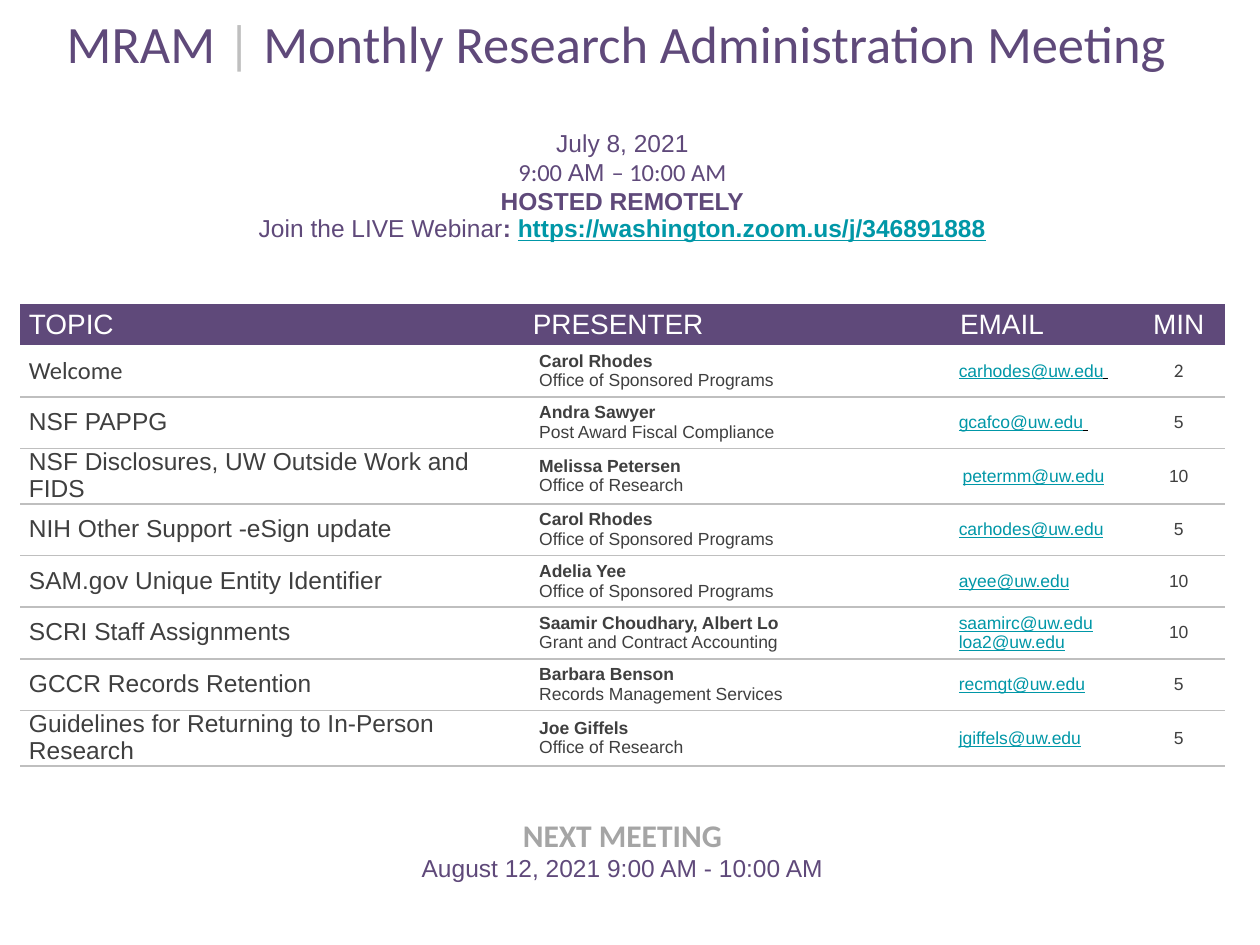
from lxml import etree
from pptx import Presentation
from pptx.dml.color import RGBColor
from pptx.enum.text import MSO_ANCHOR, PP_ALIGN
from pptx.oxml.ns import qn
from pptx.util import Inches, Pt

LEFT, CENTER = PP_ALIGN.LEFT, PP_ALIGN.CENTER
MIDDLE, BOTTOM = MSO_ANCHOR.MIDDLE, MSO_ANCHOR.BOTTOM
PLAIN = "{2D5ABB26-0587-4C30-8999-92F81FD0307C}"
COLORS = {"purple": "5F497A", "rule": "BFBFBF", "link": "0097A7", "text": "3F3F3F",
          "gray": "A5A5A5", "white": "FFFFFF", "black": "000000"}
COLS = [4, 3.33, 1.5, 0.73]
ROWS = [0.62, 1.79, 0.33, 0.41, 0.41, 0.44, 0.41, 0.41, 0.41, 0.41, 0.44, 0.93]
SPONSOR = "Office of Sponsored Programs"
TOPICS = [
    ("Welcome", "Carol Rhodes", SPONSOR, ["carhodes@uw.edu"], "2"),
    ("NSF PAPPG", "Andra Sawyer", "Post Award Fiscal Compliance", ["gcafco@uw.edu"], "5"),
    ("NSF Disclosures, UW Outside Work and FIDS", "Melissa Petersen",
     "Office of Research", ["petermm@uw.edu"], "10"),
    ("NIH Other Support -eSign update", "Carol Rhodes", SPONSOR, ["carhodes@uw.edu"], "5"),
    ("SAM.gov Unique Entity Identifier", "Adelia Yee", SPONSOR, ["ayee@uw.edu"], "10"),
    ("SCRI Staff Assignments", "Saamir Choudhary, Albert Lo",
     "Grant and Contract Accounting", ["saamirc@uw.edu", "loa2@uw.edu"], "10"),
    ("GCCR Records Retention", "Barbara Benson", "Records Management Services",
     ["recmgt@uw.edu"], "5"),
    ("Guidelines for Returning to In-Person Research", "Joe Giffels",
     "Office of Research", ["jgiffels@uw.edu"], "5"),
]


def run(text, size, color="text", font="Arial", bold=False, line=False):
    """Describe one run of text."""
    return text, size, color, font, bold, line


def fill_cell(cell, lines, align=LEFT, anchor=MIDDLE, side=0.07, base=0,
              fill="white", gap=None):
    """Fill a cell with lines, each a list of runs."""
    cell.fill.solid()
    cell.fill.fore_color.rgb = RGBColor.from_string(COLORS[fill])
    cell.vertical_anchor = anchor
    cell.margin_left = cell.margin_right = Inches(side)
    cell.margin_top, cell.margin_bottom = 0, Inches(base)
    for i, runs in enumerate(lines):
        frame = cell.text_frame
        para = frame.add_paragraph() if i else frame.paragraphs[0]
        para.alignment = align
        para.line_spacing = gap
        for text, size, color, font, bold, line in runs:
            part = para.add_run()
            part.text = text
            part.font.size, part.font.name = Pt(size), font
            part.font.bold, part.font.underline = bold, line
            part.font.color.rgb = RGBColor.from_string(COLORS[color])


def rule_cell(cell):
    """Draw a thin rule under a cell."""
    props = cell._tc.get_or_add_tcPr()
    edge = etree.Element(qn("a:lnB"), w=str(Pt(1)))
    solid = etree.SubElement(edge, qn("a:solidFill"))
    etree.SubElement(solid, qn("a:srgbClr"), val=COLORS["rule"])
    props.insert(0, edge)


def add_grid(slide, left, top):
    """Place the empty table with its full-width rows merged."""
    frame = slide.shapes.add_table(len(ROWS), len(COLS), Inches(left), Inches(top),
                                   Inches(sum(COLS)), Inches(sum(ROWS)))
    table = frame.table
    table.first_row = table.horz_banding = False
    table._tbl.tblPr.find(qn("a:tableStyleId")).text = PLAIN
    for col, width in zip(table.columns, COLS):
        col.width = Inches(width)
    for row, height in zip(table.rows, ROWS):
        row.height = Inches(height)
    for r in (0, 1, len(ROWS) - 1):
        table.cell(r, 0).merge(table.cell(r, len(COLS) - 1))
    return table


def fill_intro(title, when):
    """Write the meeting title and its date and place."""
    fill_cell(title, [[
        run("MRAM ", 30, "purple", "Calibri"), run("|", 30, "rule", "Calibri"),
        run(" Monthly Research Administration Meeting ", 30, "purple", "Calibri"),
    ]], CENTER, BOTTOM)
    fill_cell(when, [
        [run("July 8, 2021", 14, "purple")],
        [run("9:00 ", 14, "purple", "Calibri"), run("AM ", 14, "purple"),
         run("– 10:00 AM", 14, "purple", "Calibri")],
        [run("HOSTED REMOTELY", 14, "purple", bold=True)],
        [run("Join the LIVE Webinar", 14, "purple"), run(": ", 14, "purple", bold=True),
         run("https://washington.zoom.us/j/346891888", 14, "link", bold=True, line=True)],
    ], CENTER, BOTTOM, base=0.48)


def fill_head(cells):
    """Write the column headings."""
    heads = [("TOPIC", LEFT, 0.07), ("PRESENTER", LEFT, 0.07),
             ("EMAIL", LEFT, 0.13), ("MIN", CENTER, 0.07)]
    for cell, (text, align, side) in zip(cells, heads):
        fill_cell(cell, [[run(text, 16, "white")]], align, side=side, fill="purple")


def fill_topic(cells, i, topic, name, office, mails, mins):
    """Write one agenda row."""
    name_cell, who, mail, time = cells
    font, size = ("Calibri", 11) if i == 0 else ("Arial", 10)
    fill_cell(name_cell, [[run(topic, 14, font=font)]], gap=0.95)
    fill_cell(who, [[run(name, 10, bold=True)], [run(office, 10)]], side=0.12)
    links = [[run(m, 10, "link", line=True)] for m in mails]
    if i < 2:
        links[0].append(run(" ", 10, "black", line=True))
    fill_cell(mail, links, side=0.15 if i == 2 else 0.12)
    fill_cell(time, [[run(mins, size, font=font)]], CENTER)
    for cell in cells:
        rule_cell(cell)


def fill_next(cell):
    """Write the date of the next meeting."""
    fill_cell(cell, [
        [run("NEXT MEETING", 18, "gray", "Calibri", True)],
        [run("August 12, 2021 9:00 AM - 10:00 AM", 14, "purple")],
    ], CENTER, BOTTOM)


def main():
    """Build the agenda slide."""
    deck = Presentation()
    deck.slide_width, deck.slide_height = Inches(10), Inches(7.5)
    slide = deck.slides.add_slide(deck.slide_layouts[6])
    table = add_grid(slide, 0.16, 0)
    fill_intro(table.cell(0, 0), table.cell(1, 0))
    fill_head(table.rows[2].cells)
    for i, topic in enumerate(TOPICS):
        fill_topic(list(table.rows[i + 3].cells), i, *topic)
    fill_next(table.cell(len(ROWS) - 1, 0))
    deck.save("out.pptx")


if __name__ == "__main__":
    main()
